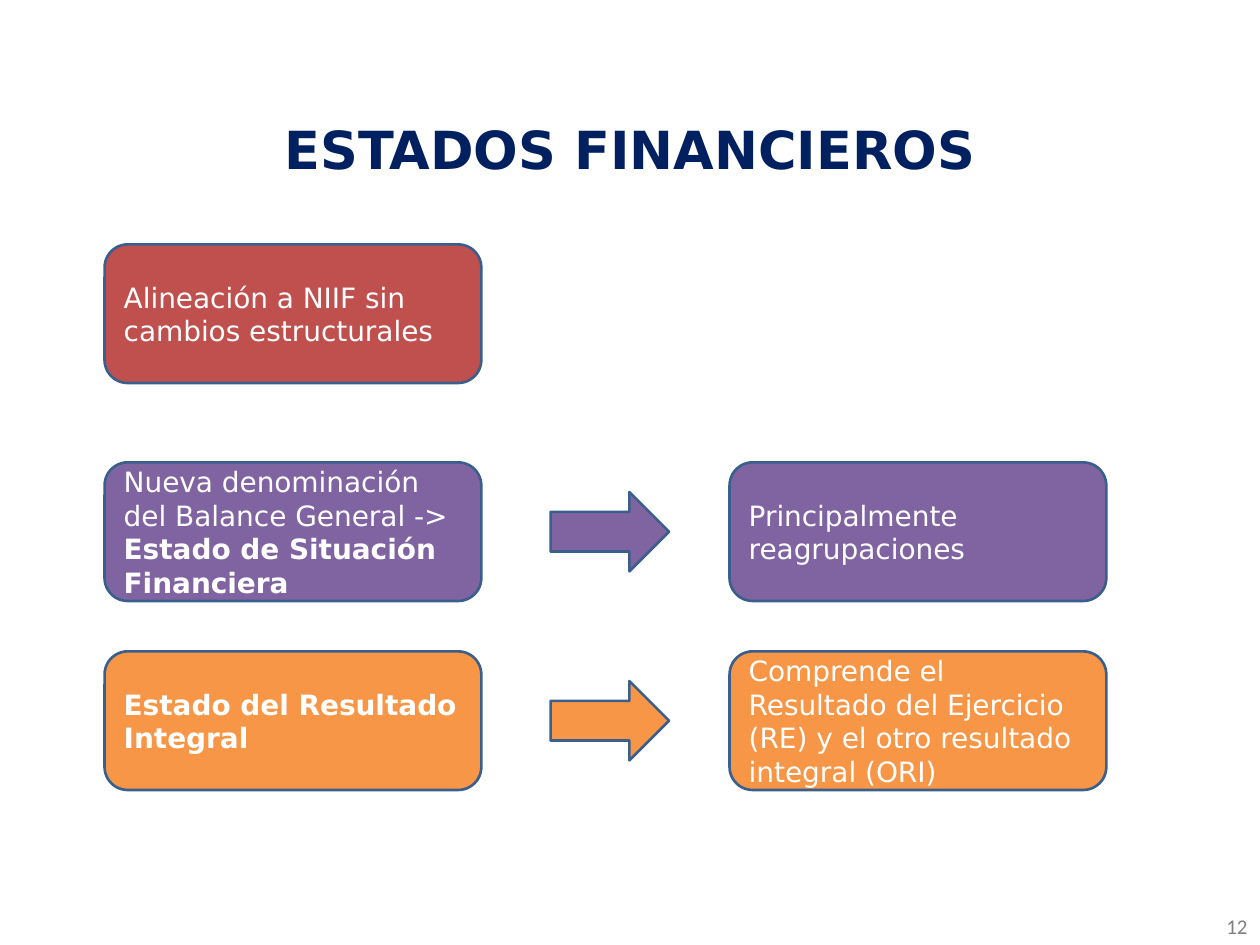
"""Build the slide on the new names and contents of the financial statements."""
from pptx import Presentation
from pptx.dml.color import RGBColor
from pptx.enum.shapes import MSO_SHAPE
from pptx.enum.text import MSO_ANCHOR, PP_ALIGN
from pptx.util import Inches, Pt

COLORS = {
    "title": "002060",
    "number": "808080",
    "text": "FFFFFF",
    "outline": "3A5F8C",
    "red": "C0504D",
    "purple": "8064A2",
    "orange": "F79646",
}
TITLE = "ESTADOS FINANCIEROS"
PAGE_NUMBER = "12"
ROWS = [
    {"top": 1.94, "color": "red",
     "boxes": [[("Alineación a NIIF sin cambios estructurales", False)]]},
    {"top": 3.67, "color": "purple",
     "boxes": [[("Nueva denominación del Balance General -> ", False),
                ("Estado de Situación Financiera", True)],
               [("Principalmente reagrupaciones", False)]]},
    {"top": 5.17, "color": "orange",
     "boxes": [[("Estado del Resultado Integral", True)],
               [("Comprende el Resultado del Ejercicio (RE) "
                 "y el otro resultado integral (ORI)", False)]]},
]
COLUMN_LEFTS = (0.83, 5.79)
BOX_WIDTH, BOX_HEIGHT = 2.99, 1.1
ARROW_LEFT, ARROW_WIDTH, ARROW_HEIGHT = 4.37, 0.94, 0.63


def rgb(name):
    return RGBColor.from_string(COLORS[name])


def write(shape, runs, size, color, align, anchor, font="DejaVu Sans"):
    frame = shape.text_frame
    frame.word_wrap = True
    frame.vertical_anchor = anchor
    paragraph = frame.paragraphs[0]
    paragraph.alignment = align
    paragraph.font.size = Pt(size)
    paragraph.font.name = font
    paragraph.font.color.rgb = rgb(color)
    for text, bold in runs:
        run = paragraph.add_run()
        run.text = text
        run.font.bold = bold


def add_filled_shape(slide, kind, left, top, width, height, color):
    shape = slide.shapes.add_shape(
        kind, Inches(left), Inches(top), Inches(width), Inches(height))
    shape.shadow.inherit = False
    shape.fill.solid()
    shape.fill.fore_color.rgb = rgb(color)
    shape.line.color.rgb = rgb("outline")
    shape.line.width = Pt(1.5)
    return shape


def add_row(slide, top, color, boxes):
    for left, runs in zip(COLUMN_LEFTS, boxes):
        box = add_filled_shape(slide, MSO_SHAPE.ROUNDED_RECTANGLE,
                               left, top, BOX_WIDTH, BOX_HEIGHT, color)
        write(box, runs, 16, "text", PP_ALIGN.LEFT, MSO_ANCHOR.MIDDLE)
    if len(boxes) > 1:
        arrow_top = top + (BOX_HEIGHT - ARROW_HEIGHT) / 2
        add_filled_shape(slide, MSO_SHAPE.RIGHT_ARROW, ARROW_LEFT, arrow_top,
                         ARROW_WIDTH, ARROW_HEIGHT, color)


def main():
    presentation = Presentation()
    presentation.slide_width = Inches(10)
    presentation.slide_height = Inches(7.5)
    slide = presentation.slides.add_slide(presentation.slide_layouts[6])

    title = slide.shapes.add_textbox(
        Inches(0), Inches(0.86), Inches(10), Inches(0.64))
    write(title, [(TITLE, True)], 30, "title",
          PP_ALIGN.CENTER, MSO_ANCHOR.MIDDLE)
    number = slide.shapes.add_textbox(
        Inches(9.3), Inches(6.98), Inches(0.7), Inches(0.52))
    write(number, [(PAGE_NUMBER, False)], 12, "number",
          PP_ALIGN.RIGHT, MSO_ANCHOR.BOTTOM, "Calibri")

    for row in ROWS:
        add_row(slide, **row)
    presentation.save("out.pptx")


if __name__ == "__main__":
    main()
